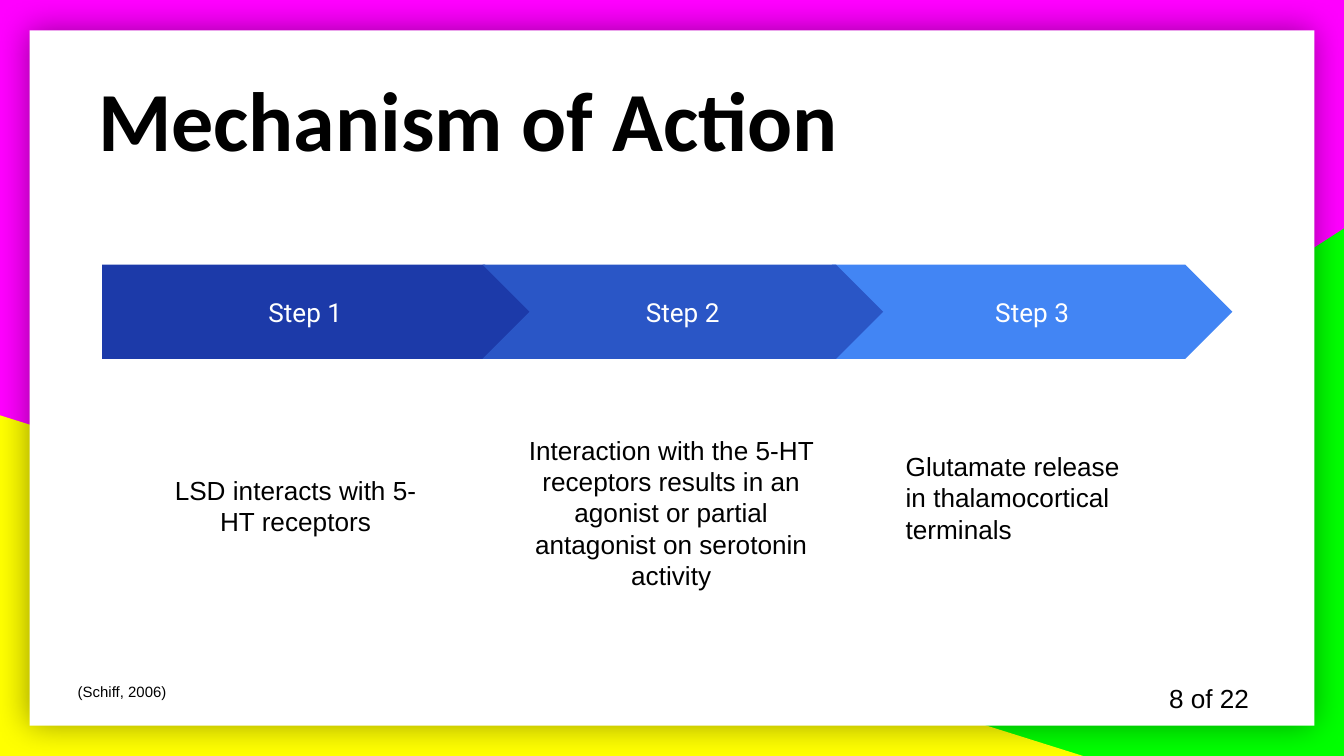
from lxml.etree import SubElement
from pptx import Presentation
from pptx.dml.color import RGBColor
from pptx.enum.shapes import MSO_SHAPE as Preset
from pptx.enum.text import MSO_ANCHOR as Anchor, MSO_AUTO_SIZE as AutoSize, PP_ALIGN as Align
from pptx.oxml.ns import qn
from pptx.util import Inches, Pt

BLACK = RGBColor(0x00, 0x00, 0x00)
WHITE = RGBColor(0xFF, 0xFF, 0xFF)
MAGENTA = RGBColor(0xFF, 0x00, 0xFF)
GREEN = RGBColor(0x00, 0xFF, 0x00)
YELLOW = RGBColor(0xFF, 0xFF, 0x00)
NAVY = RGBColor(0x1C, 0x3A, 0xA9)
BLUE = RGBColor(0x2A, 0x56, 0xC6)
SKY = RGBColor(0x42, 0x85, 0xF4)

COLUMNS, ROWS = 100, 56.25
TITLE_ONLY = 5


def write(shape, text, size=14, font="Arial", color=BLACK, bold=False,
          align=Align.LEFT, anchor=Anchor.TOP, inset_y=0.1):
    frame = shape.text_frame
    frame.word_wrap = True
    frame.auto_size = AutoSize.NONE
    frame.vertical_anchor = anchor
    frame.margin_left = frame.margin_right = Inches(0.1)
    frame.margin_top = frame.margin_bottom = Inches(inset_y)
    paragraph = frame.paragraphs[0]
    paragraph.alignment = align
    run = paragraph.add_run()
    run.text = text
    run.font.size = Pt(size)
    run.font.name = font
    run.font.bold = bold
    run.font.color.rgb = color


class Deck:
    def __init__(self):
        self.show = Presentation()
        self.show.slide_width, self.show.slide_height = Inches(10), Inches(5.625)
        self.slide = self.show.slides.add_slide(self.show.slide_layouts[TITLE_ONLY])
        self.shapes = self.slide.shapes

    def place(self, left, top, width, height):
        column = self.show.slide_width / COLUMNS
        row = self.show.slide_height / ROWS
        return (round(left * column), round(top * row),
                round(width * column), round(height * row))

    def background(self, color):
        fill = self.slide.background.fill
        fill.solid()
        fill.fore_color.rgb = color

    def block(self, preset, area, color):
        block = self.shapes.add_shape(preset, *self.place(*area))
        block.shadow.inherit = False
        block.fill.solid()
        block.fill.fore_color.rgb = color
        block.line.fill.background()
        return block

    def corner(self, area, color, mirrored=False):
        corner = self.block(Preset.RIGHT_TRIANGLE, area, color)
        if mirrored:
            corner._element.spPr.find(qn("a:xfrm")).set("flipH", "1")

    def card(self, area):
        card = self.block(Preset.RECTANGLE, area, WHITE)
        effects = card._element.spPr.find(qn("a:effectLst"))
        glow = SubElement(effects, qn("a:outerShdw"), blurRad=str(Pt(18)),
                          dist="0", dir="0", algn="ctr", rotWithShape="0")
        shade = SubElement(glow, qn("a:srgbClr"), val=str(BLACK))
        SubElement(shade, qn("a:alpha"), val="40000")

    def title(self, text, area):
        title = self.shapes.title
        title.left, title.top, title.width, title.height = self.place(*area)
        write(title, text, size=45, font="Calibri", bold=True)
        self.shapes._spTree.append(title._element)

    def step(self, label, preset, left, width, color):
        arrow = self.block(preset, (left, 19.7, width, 7), color)
        arrow.adjustments[0] = 0.5
        write(arrow, label, font="Roboto", color=WHITE,
              align=Align.CENTER, anchor=Anchor.MIDDLE)

    def text(self, text, area, **style):
        write(self.shapes.add_textbox(*self.place(*area)), text, **style)


def main():
    deck = Deck()
    deck.background(MAGENTA)
    deck.corner((39.2, 17, 60.8, 39.25), GREEN, mirrored=True)
    deck.corner((0, 30.9, 80.6, 25.35), YELLOW)
    deck.card((2.2, 2.25, 95.6, 51.75))

    deck.step("Step 3", Preset.CHEVRON, 61.9, 29.8, SKY)
    deck.step("Step 1", Preset.PENTAGON, 7.6, 32, NAVY)
    deck.step("Step 2", Preset.CHEVRON, 35.9, 29.8, BLUE)

    deck.text("LSD interacts with 5-HT receptors",
              (11.2, 34.3, 21.6, 10.4), align=Align.CENTER)
    deck.text("Interaction with the 5-HT receptors results in an agonist or "
              "partial antagonist on serotonin activity",
              (38.1, 31.3, 23.7, 14.6), align=Align.CENTER)
    deck.text("Glutamate release in thalamocortical terminals",
              (66.4, 32.5, 17.9, 9.7))
    deck.text("(Schiff, 2006)", (4.8, 49.8, 19.7, 3.7), size=8)
    deck.title("Mechanism of Action", (6.3, 4, 82.1, 10.4))
    deck.text("8 of 22", (86, 50.3, 9, 3.4), inset_y=0.05)
    deck.show.save("out.pptx")


if __name__ == "__main__":
    main()
